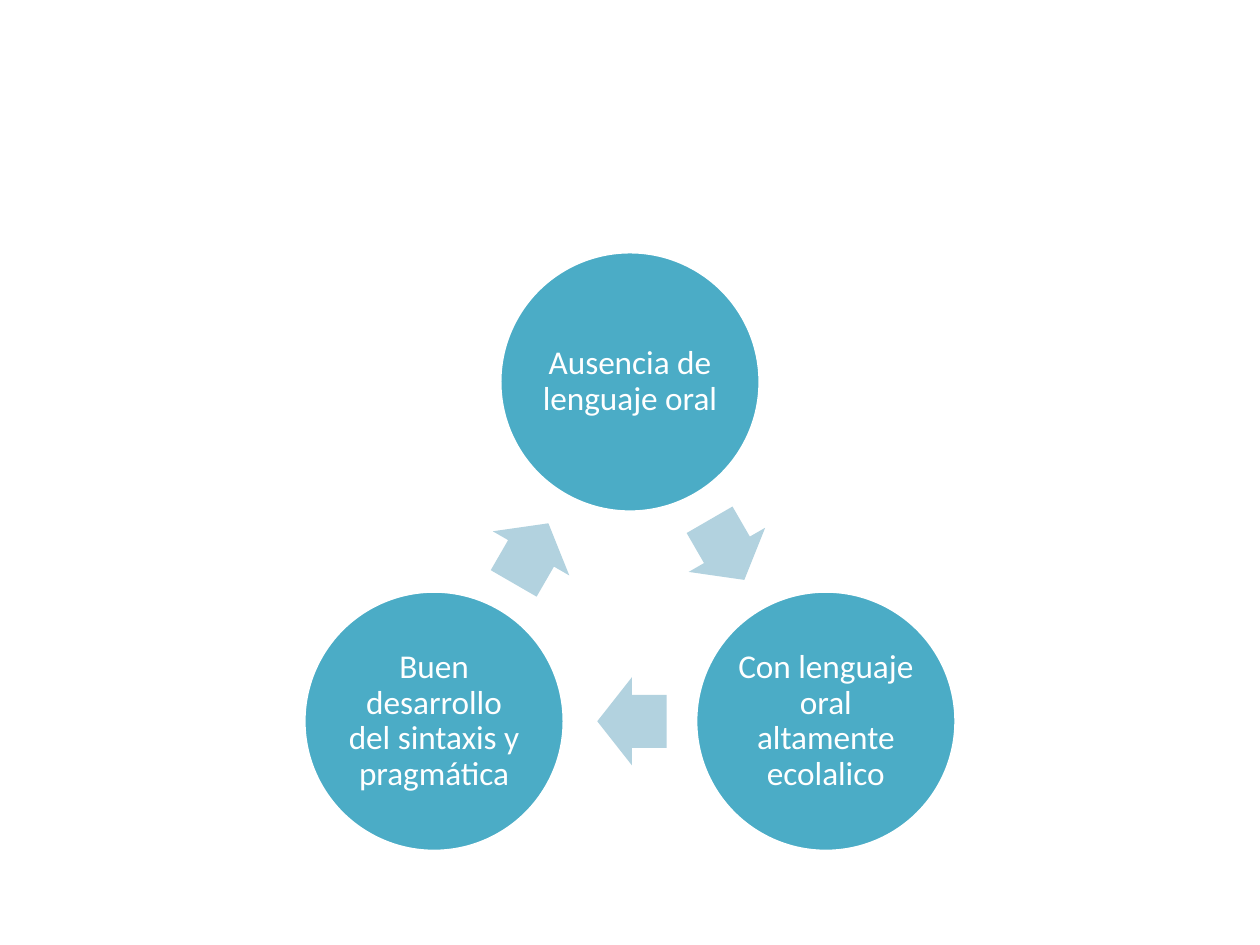
"""Build a slide with a three-step cycle of language profiles."""
import math
from dataclasses import dataclass

from pptx import Presentation
from pptx import util as u
from pptx.dml import color
from pptx.enum import shapes, text

CENTER_X, CENTER_Y = 12.7, 12.26
RADIUS = 4.56
DIAMETER = 5.25
ARROW_W, ARROW_H = 1.4, 1.78
ARROW_SETBACK = 0.04


@dataclass
class Step:
    label: str
    angle: float


def rgb(value: str) -> color.RGBColor:
    return color.RGBColor.from_string(value)


def polar(radius: float, angle: float) -> tuple[float, float]:
    a = math.radians(angle)
    return radius * math.cos(a), radius * math.sin(a)


def add_centered(s, kind, dx: float, dy: float, w: float, h: float, fill: str):
    sp = s.shapes.add_shape(kind, u.Cm(CENTER_X + dx - w / 2),
                            u.Cm(CENTER_Y + dy - h / 2), u.Cm(w), u.Cm(h))
    sp.shadow.inherit = False
    sp.fill.solid()
    sp.fill.fore_color.rgb = rgb(fill)
    return sp


def add_step(s, step: Step) -> None:
    dx, dy = polar(RADIUS, step.angle)
    sp = add_centered(s, shapes.MSO_SHAPE.OVAL, dx, dy, DIAMETER, DIAMETER, "4BACC6")
    sp.line.color.rgb = rgb("FFFFFF")
    sp.line.width = u.Pt(2)
    tf = sp.text_frame
    tf.word_wrap = True
    tf.vertical_anchor = text.MSO_ANCHOR.MIDDLE
    tf.margin_left = tf.margin_right = tf.margin_top = tf.margin_bottom = u.Cm(0.07)
    p = tf.paragraphs[0]
    p.alignment = text.PP_ALIGN.CENTER
    p.line_spacing = 0.9
    r = p.add_run()
    r.text = step.label
    r.font.name = "Calibri"
    r.font.size = u.Pt(19)
    r.font.color.rgb = rgb("FFFFFF")


def add_arrow(s, step: Step) -> None:
    middle = step.angle + 60
    heading = middle + 90
    dx, dy = polar(RADIUS / 2, middle)
    back_x, back_y = polar(ARROW_SETBACK, heading)
    sp = add_centered(s, shapes.MSO_SHAPE.RIGHT_ARROW, dx - back_x, dy - back_y,
                      ARROW_W, ARROW_H, "B2D2DF")
    sp.line.fill.background()
    sp.adjustments[0] = 0.6
    sp.adjustments[1] = 0.5
    sp.rotation = heading % 360


def main() -> None:
    prs = Presentation()
    prs.slide_width, prs.slide_height = u.Cm(25.4), u.Cm(19.05)
    s = prs.slides.add_slide(prs.slide_layouts[6])
    labels = ("Ausencia de lenguaje oral",
              "Con lenguaje oral altamente ecolalico",
              "Buen desarrollo del sintaxis y pragmática")
    for i, label in enumerate(labels):
        step = Step(label, 120 * i - 90)
        add_step(s, step)
        add_arrow(s, step)
    prs.save("out.pptx")


if __name__ == "__main__":
    main()
